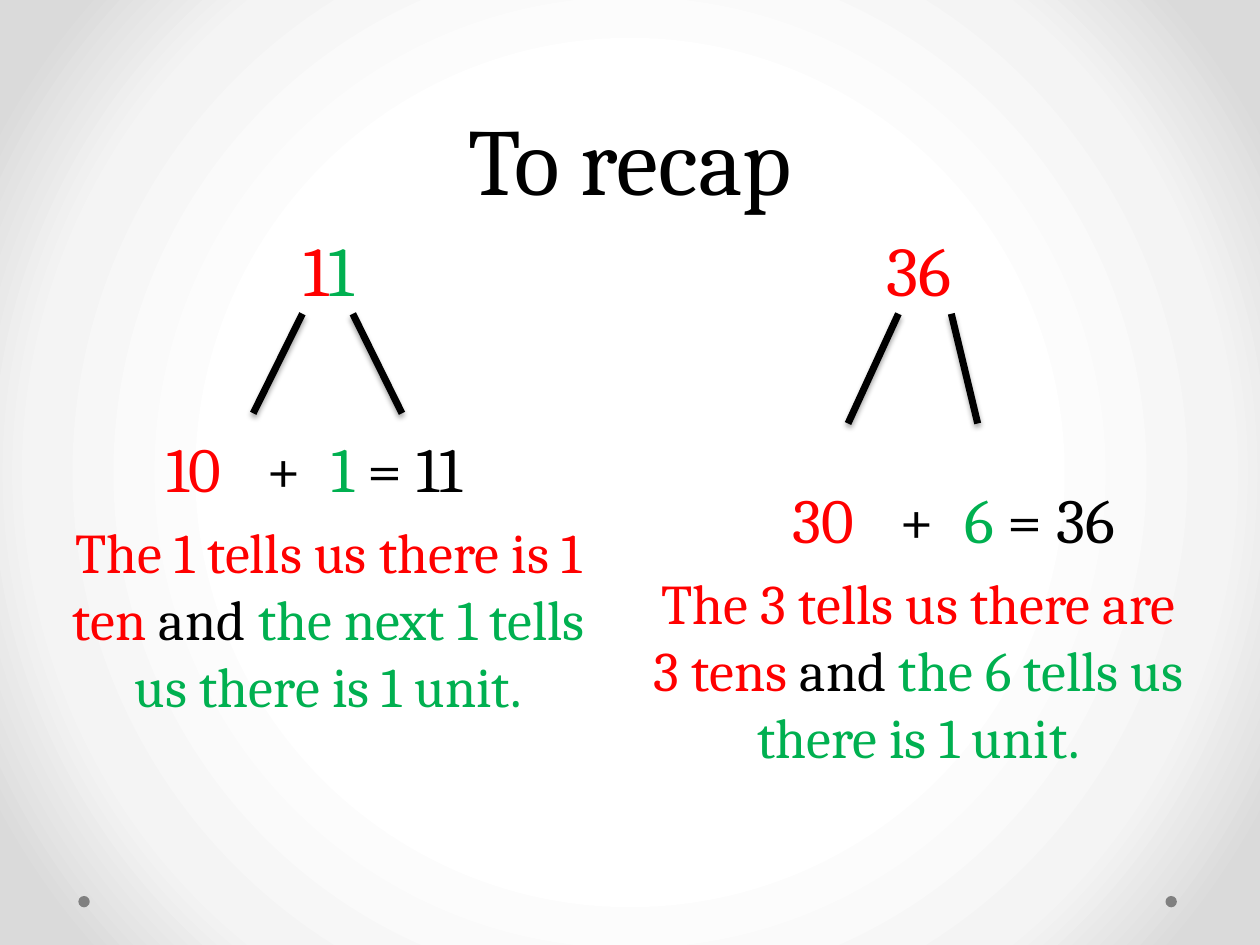
"""Build the recap slide that splits 11 and 36 into tens and units."""
from dataclasses import dataclass

from pptx import Presentation
from pptx.dml.color import RGBColor
from pptx.enum.shapes import MSO_CONNECTOR, MSO_SHAPE
from pptx.enum.text import MSO_ANCHOR, PP_ALIGN
from pptx.oxml import parse_xml
from pptx.util import Pt

SPACE = 'xmlns:a="http://schemas.openxmlformats.org/drawingml/2006/main"'
RED, GREEN, BLACK, GREY = "FF0000", "00B050", "000000", "808080"
STOPS = {50: "FFFFFF", 76: "F4F4F4", 92: "DADADA"}


@dataclass
class Run:
    text: str
    tint: str = BLACK
    gap: float = 0


@dataclass
class Line:
    runs: list[Run]
    size: float
    form: dict
    left: float = 0


@dataclass
class Panel:
    left: float
    lines: list[Line]
    legs: list[tuple[float, float]]
    foot: float


def paint(hue: str) -> RGBColor:
    return RGBColor.from_string(hue)


def apply(item, form: dict) -> None:
    for name, value in form.items():
        setattr(item, name, value)


def fill_back(slide) -> None:
    stops = "".join(f'<a:gs pos="{at * 1000}"><a:srgbClr val="{hue}"/></a:gs>'
                    for at, hue in STOPS.items())
    slide.background.fill.solid()
    solid = slide.background.fill._xPr.find(
        "{http://schemas.openxmlformats.org/drawingml/2006/main}solidFill")
    solid.getparent().replace(solid, parse_xml(
        f'<a:gradFill {SPACE} rotWithShape="1"><a:gsLst>{stops}</a:gsLst>'
        '<a:path path="circle"><a:fillToRect l="50000" t="50000" r="50000" b="50000"/>'
        '</a:path></a:gradFill>'))


def add_text(slide, box: tuple, lines: list[Line], anchor=MSO_ANCHOR.TOP) -> None:
    frame = slide.shapes.add_textbox(*map(Pt, box)).text_frame
    apply(frame, {"word_wrap": True, "vertical_anchor": anchor})
    for index, line in enumerate(lines):
        para = frame.add_paragraph() if index else frame.paragraphs[0]
        apply(para, line.form)
        if line.left:
            para._p.get_or_add_pPr().set("marL", str(Pt(line.left)))
        for part in line.runs:
            run = para.add_run()
            run.text = part.text
            apply(run.font, {"name": "Cambria", "size": Pt(line.size)})
            run.font.color.rgb = paint(part.tint)
            if part.gap:
                run.font._element.set("spc", str(int(part.gap * 100)))


def add_leg(slide, start: tuple, end: tuple) -> None:
    leg = slide.shapes.add_connector(MSO_CONNECTOR.STRAIGHT, *map(Pt, start + end))
    leg.line.width = Pt(4)
    leg.line.color.rgb = paint(BLACK)
    leg._element.spPr.append(parse_xml(
        f'<a:effectLst {SPACE}><a:outerShdw blurRad="{Pt(3.1)}" dist="{Pt(1.8)}" '
        'dir="5400000" rotWithShape="0"><a:srgbClr val="000000"><a:alpha val="35000"/>'
        '</a:srgbClr></a:outerShdw></a:effectLst>'))


def add_dot(slide, left: float) -> None:
    dot = slide.shapes.add_shape(MSO_SHAPE.OVAL, *map(Pt, (left, 512, 6.5, 6.5)))
    dot.shadow.inherit = False
    dot.fill.solid()
    dot.fill.fore_color.rgb = paint(GREY)
    dot.line.fill.background()


def make_lines(head: list[Run], tens: str, unit: str, total: str,
               drop: float, left: float, tale: list[Run]) -> list[Line]:
    terms = [Run(tens, RED), Run(" ", gap=18), Run("+"), Run(" ", gap=9),
             Run(unit, GREEN), Run(f" = {total}")]
    mid = PP_ALIGN.CENTER
    return [Line(head, 40, {"alignment": mid}),
            Line(terms, 36, {"alignment": PP_ALIGN.LEFT, "space_before": Pt(drop)}, left),
            Line(tale, 32, {"alignment": mid, "space_before": Pt(7)})]


PANELS = [
    Panel(365.8, make_lines(
        [Run("36", RED)], "30", "6", "36", 97, 80,
        [Run("The 3 tells us there are 3 tens ", RED), Run("and "),
         Run("the 6 tells us there is 1 unit.", GREEN)]),
        [(543.6, 558.7), (513.4, 484.6)], 242),
    Panel(28.8, make_lines(
        [Run("1", RED), Run("1", GREEN)], "10", "1", "11", 68, 59,
        [Run("The 1 tells us there is 1 ten ", RED), Run("and "),
         Run("the next 1 tells us there is 1 unit.", GREEN)]),
        [(172.8, 144.7), (201.6, 229.7)], 236.2),
]


def main() -> None:
    deck = Presentation()
    apply(deck, {"slide_width": Pt(720), "slide_height": Pt(540)})
    slide = deck.slides.add_slide(deck.slide_layouts[6])
    fill_back(slide)
    for left in (666, 44.8):
        add_dot(slide, left)
    title = Line([Run("To recap")], 54,
                 {"alignment": PP_ALIGN.CENTER, "line_spacing": Pt(58)})
    add_text(slide, (36, 0, 648, 126), [title], MSO_ANCHOR.BOTTOM)
    for panel in PANELS:
        add_text(slide, (panel.left, 126, 318.2, 356.4), panel.lines)
        for top, base in panel.legs:
            add_leg(slide, (top, 179.3), (base, panel.foot))
    deck.save("out.pptx")


if __name__ == "__main__":
    main()
